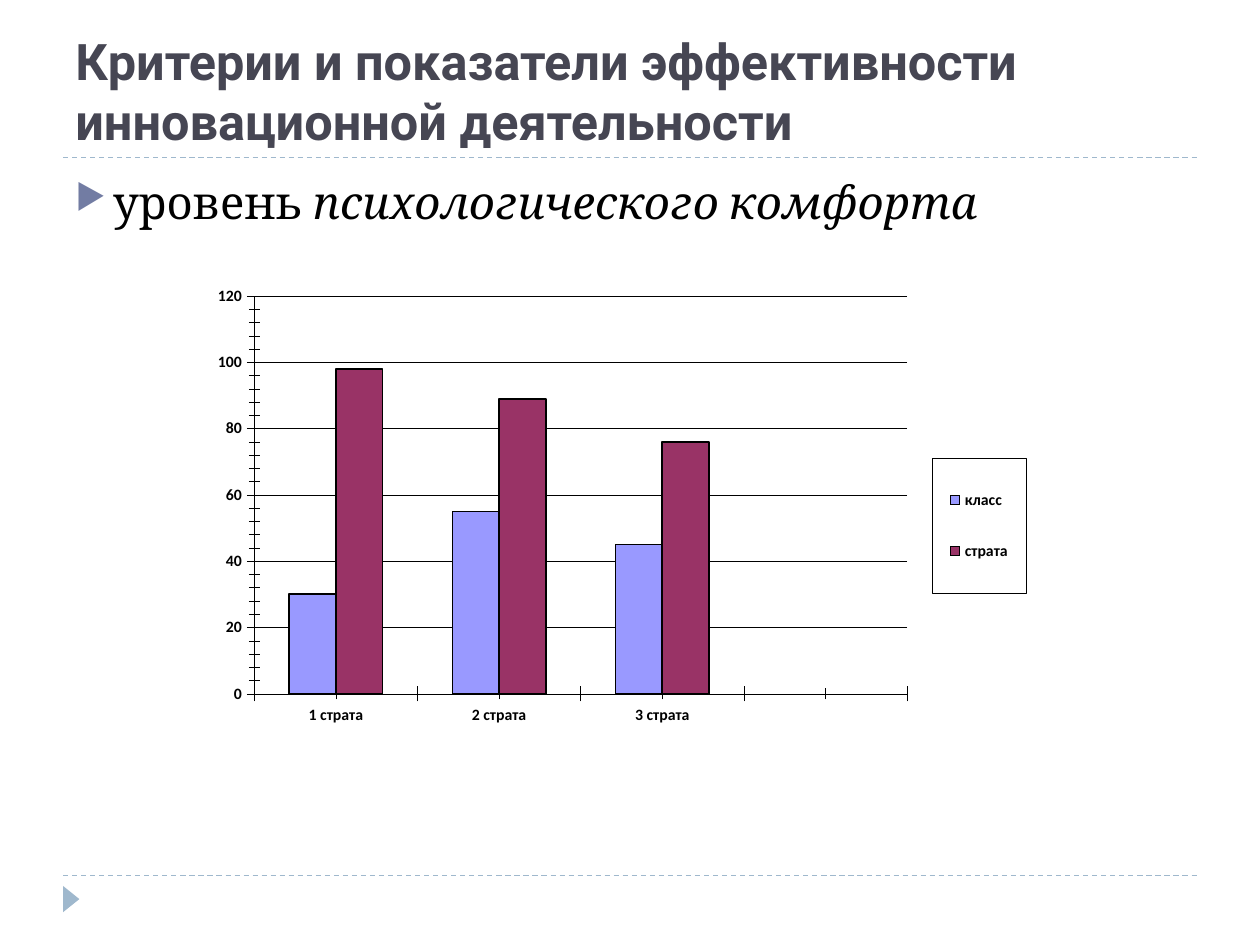
from lxml import etree
from pptx import Presentation
from pptx.chart.data import CategoryChartData
from pptx.dml.color import RGBColor
from pptx.enum.chart import XL_CHART_TYPE, XL_LEGEND_POSITION, XL_TICK_MARK
from pptx.enum.dml import MSO_LINE
from pptx.enum.shapes import MSO_CONNECTOR, MSO_SHAPE
from pptx.enum.text import MSO_ANCHOR
from pptx.oxml import parse_xml
from pptx.oxml.ns import nsdecls, qn
from pptx.util import Cm, Pt

COLUMNS = XL_CHART_TYPE.COLUMN_CLUSTERED
RIGHT = XL_LEGEND_POSITION.RIGHT
CROSS = XL_TICK_MARK.CROSS
DASH = MSO_LINE.DASH
STRAIGHT = MSO_CONNECTOR.STRAIGHT
TRIANGLE = MSO_SHAPE.ISOSCELES_TRIANGLE
TOP, BOTTOM = MSO_ANCHOR.TOP, MSO_ANCHOR.BOTTOM

COLORS = {
    "title": "464653",
    "text": "000000",
    "rule": "9FB8CD",
    "bullet": "727CA3",
    "класс": "9999FF",
    "страта": "993366",
}


def add_text(runs, top, height, size, font, color, bold=False, anchor=TOP):
    sp = s.shapes.add_textbox(Cm(1.27), Cm(top), Cm(22.86), Cm(height))
    tf = sp.text_frame
    tf.word_wrap = True
    tf.vertical_anchor = anchor
    p = tf.paragraphs[0]
    for text, italic in runs:
        r = p.add_run()
        r.text = text
        r.font.size = Pt(size)
        r.font.name = font
        r.font.bold = bold
        r.font.italic = italic
        r.font.color.rgb = RGBColor.from_string(COLORS[color])
    return p


def set_layout(parent, index, x, y, w, h, inner=False):
    for old in parent.findall(qn("c:layout")):
        parent.remove(old)
    target = '<c:layoutTarget val="inner"/>' if inner else ""
    parent.insert(index, parse_xml(
        f'<c:layout {nsdecls("c")}><c:manualLayout>{target}'
        '<c:xMode val="edge"/><c:yMode val="edge"/>'
        f'<c:x val="{x}"/><c:y val="{y}"/><c:w val="{w}"/><c:h val="{h}"/>'
        '</c:manualLayout></c:layout>'))


prs = Presentation()
prs.slide_width, prs.slide_height = Cm(25.4), Cm(19.05)
s = prs.slides.add_slide(prs.slide_layouts[6])

for y in (17.65, 3.18):
    line = s.shapes.add_connector(STRAIGHT, Cm(1.27), Cm(y), Cm(24.13), Cm(y))
    line.line.color.rgb = RGBColor.from_string(COLORS["rule"])
    line.line.width = Pt(0.75)
    line.line.dash_style = DASH
    etree.SubElement(line._element.spPr, qn("a:effectLst"))

sp = s.shapes.add_shape(TRIANGLE, Cm(1.17), Cm(17.96), Cm(0.53), Cm(0.33))
sp.rotation = 90
sp.shadow.inherit = False
sp.fill.solid()
sp.fill.fore_color.rgb = RGBColor.from_string(COLORS["rule"])
sp.line.fill.background()

add_text([("Критерии и показатели эффективности инновационной деятельности", False)],
         0.43, 2.74, 28.8, "Roboto", "title", bold=True, anchor=BOTTOM)
p = add_text([("уровень ", False), ("психологического комфорта", True)],
             3.38, 13.72, 26, "Cambria", "text")
p.space_before = Pt(6)
pPr = p._p.get_or_add_pPr()
pPr.set("marL", str(Cm(0.76)))
pPr.set("indent", str(-Cm(0.76)))
color = etree.SubElement(pPr, qn("a:buClr"))
etree.SubElement(color, qn("a:srgbClr"), val=COLORS["bullet"])
etree.SubElement(pPr, qn("a:buSzPct"), val="76000")
etree.SubElement(pPr, qn("a:buChar"), char="▶")

data = CategoryChartData()
data.categories = ["1 страта", "2 страта", "3 страта", ""]
data.add_series("класс", (30, 55, 45, None))
data.add_series("страта", (98, 89, 76, None))
chart = s.shapes.add_chart(COLUMNS, Cm(3.76), Cm(4.95), Cm(17.09), Cm(11.3), data).chart
black = RGBColor.from_string(COLORS["text"])
chart.has_title = False
chart.font.name = "Calibri"
chart.font.size = Pt(9)
chart.font.bold = True
chart.font.color.rgb = black
set_layout(chart._chartSpace.chart.plotArea, 0, 0.08, 0.09, 0.77, 0.71, inner=True)

plot = chart.plots[0]
plot.vary_by_categories = False
plot.gap_width = 150
plot.overlap = 0
for series in plot.series:
    series.format.fill.solid()
    series.format.fill.fore_color.rgb = RGBColor.from_string(COLORS[series.name])
    series.format.line.color.rgb = black
    series.format.line.width = Pt(1)

values = chart.value_axis
values.minimum_scale, values.maximum_scale = 0, 120
values.major_unit, values.minor_unit = 20, 4
values.has_major_gridlines = True
for axis in (chart.category_axis, values):
    axis.major_tick_mark = axis.minor_tick_mark = CROSS
for item in (chart.category_axis, values, values.major_gridlines):
    item.format.line.color.rgb = black
    item.format.line.width = Pt(0.25)

chart.has_legend = True
legend = chart.legend
legend.position = RIGHT
legend.include_in_layout = True
set_layout(legend._element, 1, 0.88, 0.38, 0.11, 0.24)
legend._element.find(qn("c:overlay")).addnext(parse_xml(
    f'<c:spPr {nsdecls("c", "a")}><a:ln w="3175"><a:solidFill>'
    f'<a:srgbClr val="{COLORS["text"]}"/></a:solidFill></a:ln></c:spPr>'))

prs.save("out.pptx")
